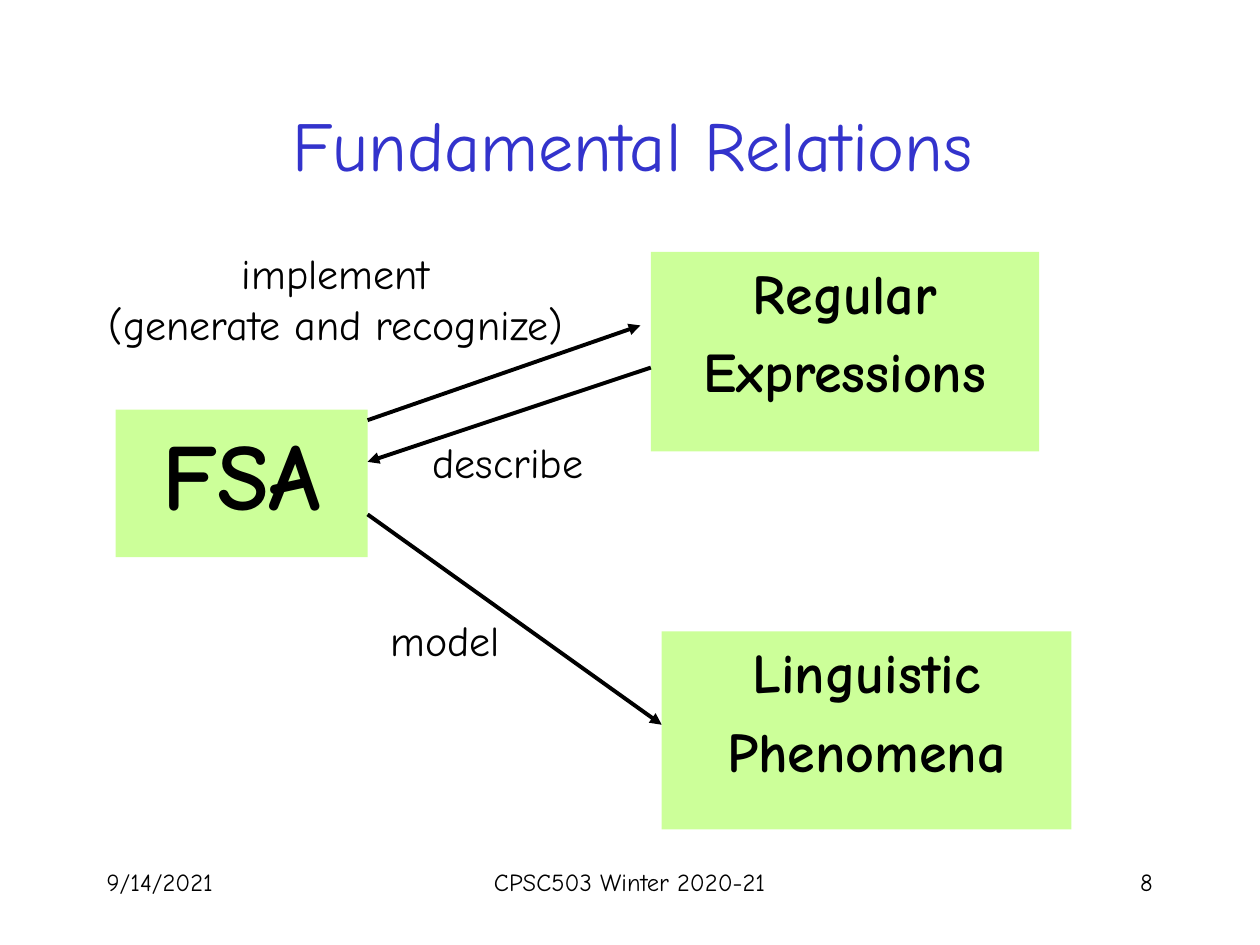
from collections import namedtuple

from lxml.etree import SubElement
from pptx import Presentation
from pptx.dml.color import RGBColor
from pptx.enum.shapes import MSO_CONNECTOR, MSO_SHAPE
from pptx.enum.text import MSO_ANCHOR, MSO_AUTO_SIZE, PP_ALIGN
from pptx.oxml.ns import qn
from pptx.util import Cm, Pt

FONT = "Comic Neue"
BLACK, BLUE, GREEN = "000000", "3333CC", "CCFF99"

Box = namedtuple("Box", "left top width height")


def color(value):
    return RGBColor.from_string(value)


def inside(box, left, top, width, height):
    return Box(box.left + left, box.top + top, width, height)


def lengths(box):
    return [Cm(value) for value in box]


def place(shape, box):
    shape.left, shape.top, shape.width, shape.height = lengths(box)


def write(shape, lines, size, align=PP_ALIGN.LEFT, ink=BLACK, bold=False):
    frame = shape.text_frame
    frame.word_wrap = True
    frame.text = "\n".join(lines)
    for para in frame.paragraphs:
        para.alignment = align
        para.font.name = FONT
        para.font.size = Pt(size)
        para.font.bold = bold
        para.font.color.rgb = color(ink)


def add_text(page, box, lines, size, align=PP_ALIGN.LEFT):
    label = page.shapes.add_textbox(*lengths(box))
    write(label, lines, size, align)
    return label


def add_label(page, box, lines, align=PP_ALIGN.LEFT):
    label = add_text(page, box, lines, 24, align)
    label.text_frame.auto_size = MSO_AUTO_SIZE.SHAPE_TO_FIT_TEXT


def format_concept(shape, lines, size):
    """Make the shape a green block with bold, hanging, unbulleted lines."""
    shape.fill.solid()
    shape.fill.fore_color.rgb = color(GREEN)
    shape.line.fill.background()
    frame = shape.text_frame
    frame.vertical_anchor = MSO_ANCHOR.TOP
    frame.auto_size = MSO_AUTO_SIZE.NONE
    write(shape, lines, size, PP_ALIGN.CENTER, bold=True)
    for para in frame.paragraphs:
        props = para._p.get_or_add_pPr()
        props.set("marL", str(Cm(0.95)))
        props.set("indent", str(-Cm(0.95)))
        bullet = SubElement(props, qn("a:buNone"))
        props.insert(0, bullet)
        spacing = SubElement(props, qn("a:spcBef"))
        SubElement(spacing, qn("a:spcPct")).set("val", "20000")
        props.insert(0, spacing)


def add_concept(page, box, lines):
    shape = page.shapes.add_shape(MSO_SHAPE.RECTANGLE, *lengths(box))
    shape.shadow.inherit = False
    format_concept(shape, lines, 32)


def add_arrow(page, box, start, end):
    points = [Cm(value) for x, y in (start, end)
              for value in (box.left + x, box.top + y)]
    arrow = page.shapes.add_connector(MSO_CONNECTOR.STRAIGHT, *points)
    arrow.line.color.rgb = color(BLACK)
    arrow.line.width = Pt(2.25)
    SubElement(arrow.line._get_or_add_ln(), qn("a:tailEnd")).set("type", "triangle")
    SubElement(arrow._element.spPr, qn("a:effectLst"))


def fill_title(page, box):
    title = page.shapes.title
    place(title, box)
    title.text_frame.vertical_anchor = MSO_ANCHOR.MIDDLE
    write(title, ["Fundamental Relations"], 40, PP_ALIGN.CENTER, BLUE)


def add_diagram(page, box):
    automaton = page.placeholders[1]
    place(automaton, inside(box, 1.06, 3.39, 5.08, 2.97))
    format_concept(automaton, ["FSA"], 54)
    add_concept(page, inside(box, 11.85, 0.21, 7.83, 4.02), ["Regular", "Expressions"])
    add_concept(page, inside(box, 12.07, 7.86, 8.26, 3.99), ["Linguistic", "Phenomena"])

    automaton_right = 6.14
    add_arrow(page, box, (automaton_right, 3.6), (11.64, 1.69))
    add_arrow(page, box, (11.85, 2.54), (automaton_right, 4.44))
    add_arrow(page, box, (automaton_right, 5.5), (12.07, 9.74))

    add_label(page, inside(box, 6.35, 7.4, 3.23, 1.27), ["model"])
    add_label(page, inside(box, 0, 0, 11, 2.29),
              ["implement", "(generate and recognize)"], PP_ALIGN.CENTER)
    add_label(page, inside(box, 7.2, 3.81, 4.66, 1.27), ["describe"])


def add_footer(page, box):
    """Set the date, course and page number at left, centre and right."""
    fields = [
        ("9/14/2021", 5.29, PP_ALIGN.LEFT),
        ("CPSC503 Winter 2020-21", 8.05, PP_ALIGN.CENTER),
        ("8", 5.29, PP_ALIGN.RIGHT),
    ]
    for index, (text, width, align) in enumerate(fields):
        left = (box.width - width) * index / 2
        add_text(page, inside(box, left, 0, width, box.height), [text], 14, align)


def main():
    deck = Presentation()
    deck.slide_width, deck.slide_height = Cm(25.4), Cm(19.05)
    page = deck.slides.add_slide(deck.slide_layouts[1])
    add_footer(page, Box(1.9, 17.35, 21.59, 1.27))
    fill_title(page, Box(1.96, 1.3, 21.59, 3.18))
    add_diagram(page, Box(1.27, 4.87, 20.33, 11.85))
    deck.save("out.pptx")


if __name__ == "__main__":
    main()
